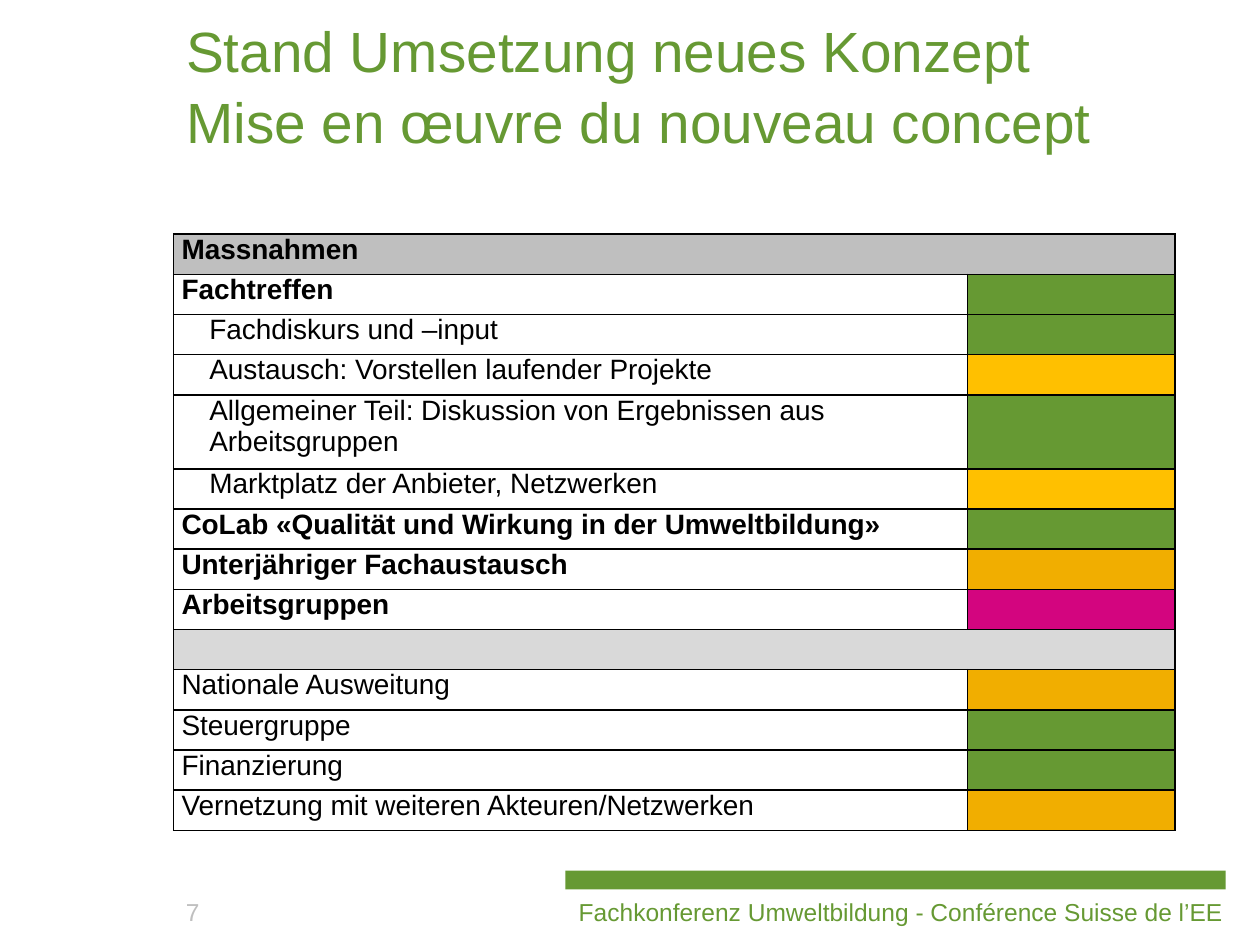
"""Build the slide on the state of the new concept."""
import dataclasses
import typing

import pptx
import pptx.dml.color
import pptx.enum.shapes
import pptx.enum.text
import pptx.oxml
import pptx.oxml.ns
import pptx.util

Cm = pptx.util.Cm
Pt = pptx.util.Pt
ALIGN = pptx.enum.text.PP_ALIGN
ANCHOR = pptx.enum.text.MSO_ANCHOR


@dataclasses.dataclass(frozen=True)
class Theme:
    """Colours and type sizes of the slide."""
    font: str = "Arial"
    green: str = "669933"
    yellow: str = "FFC000"
    orange: str = "F1AE00"
    magenta: str = "D3057F"
    black: str = "000000"
    white: str = "FFFFFF"
    header: str = "BFBFBF"
    divider: str = "D9D9D9"
    title_size: float = 32.4
    table_size: float = 16
    footer_size: float = 14
    border: float = 1


T = Theme()


class Measure(typing.NamedTuple):
    """One table row; a row without status spans both columns."""
    text: str
    status: typing.Optional[str] = None
    bold: bool = False
    indent: float = 0
    height: float = 0.81
    fill: str = T.white


class Label(typing.NamedTuple):
    """One line of text at the foot of the slide."""
    text: str
    width: float
    color: str
    align: ALIGN


MEASURES = [
    Measure("Massnahmen", bold=True, fill=T.header),
    Measure("Fachtreffen", T.green, bold=True),
    Measure("Fachdiskurs und –input", T.green, indent=0.56),
    Measure("Austausch: Vorstellen laufender Projekte", T.yellow, indent=0.56),
    Measure("Allgemeiner Teil: Diskussion von Ergebnissen aus Arbeitsgruppen",
            T.green, indent=0.56, height=1.49),
    Measure("Marktplatz der Anbieter, Netzwerken", T.yellow, indent=0.56),
    Measure("CoLab «Qualität und Wirkung in der Umweltbildung»", T.green, bold=True),
    Measure("Unterjähriger Fachaustausch", T.orange, bold=True),
    Measure("Arbeitsgruppen", T.magenta, bold=True),
    Measure("", fill=T.divider),
    Measure("Nationale Ausweitung", T.orange),
    Measure("Steuergruppe", T.green),
    Measure("Finanzierung", T.green),
    Measure("Vernetzung mit weiteren Akteuren/Netzwerken", T.orange),
]

LABELS = [
    Label("Fachkonferenz Umweltbildung - Conférence Suisse de l’EE",
          21.41, T.green, ALIGN.RIGHT),
    Label("7", 1.8, T.header, ALIGN.LEFT),
]

LEFT = 3.5
COLUMNS = (16, 4.19)


def rgb(color: str) -> pptx.dml.color.RGBColor:
    """Turn a hex string into a colour."""
    return pptx.dml.color.RGBColor.from_string(color)


def apply(target: typing.Any, values: dict) -> None:
    """Set every attribute named in values."""
    for name, value in values.items():
        setattr(target, name, value)


def set_font(font: typing.Any, size: float, color: str, bold: bool = False) -> None:
    """Format a font in the typeface of the theme."""
    apply(font, {"name": T.font, "size": Pt(size), "bold": bold})
    font.color.rgb = rgb(color)


def fill_solid(target: typing.Any, color: str) -> None:
    """Fill a shape or a cell with one colour."""
    target.fill.solid()
    target.fill.fore_color.rgb = rgb(color)


def add_title(s: typing.Any) -> None:
    """Place the two-line title in its placeholder."""
    sp = s.shapes.title
    apply(sp, {"left": Cm(LEFT), "top": Cm(0.76), "width": Cm(21), "height": Cm(3.18)})
    tf = sp.text_frame
    apply(tf, {"vertical_anchor": ANCHOR.MIDDLE, "word_wrap": True,
               "auto_size": pptx.enum.text.MSO_AUTO_SIZE.NONE,
               "margin_bottom": Cm(1.45)})
    tf.text = "Stand Umsetzung neues Konzept\vMise en œuvre du nouveau concept"
    p = tf.paragraphs[0]
    apply(p, {"alignment": ALIGN.LEFT, "line_spacing": 1.04})
    for r in p.runs:
        set_font(r.font, T.title_size, T.green)


def add_label(s: typing.Any, label: Label) -> None:
    """Add one line of footer text."""
    sp = s.shapes.add_textbox(Cm(LEFT), Cm(17.96), Cm(label.width), Cm(0.86))
    tf = sp.text_frame
    tf.word_wrap = True
    p = tf.paragraphs[0]
    p.alignment = label.align
    r = p.add_run()
    r.text = label.text
    set_font(r.font, T.footer_size, label.color)


def add_bar(s: typing.Any) -> None:
    """Add the green bar above the footer."""
    sp = s.shapes.add_shape(pptx.enum.shapes.MSO_SHAPE.RECTANGLE,
                            Cm(11.4), Cm(17.55), Cm(13.31), Cm(0.38))
    sp.shadow.inherit = False
    fill_solid(sp, T.green)
    sp.line.fill.background()


def format_cell(cell: typing.Any, color: str) -> None:
    """Give a cell its fill, margins and four borders."""
    apply(cell, {"margin_left": Cm(0.16), "margin_right": Cm(0.16),
                 "margin_top": 0, "margin_bottom": 0})
    fill_solid(cell, color)
    properties = cell._tc.get_or_add_tcPr()
    for i, side in enumerate("LRTB"):
        properties.insert(i, pptx.oxml.parse_xml(
            f'<a:ln{side} {pptx.oxml.ns.nsdecls("a")} w="{Pt(T.border)}">'
            f'<a:solidFill><a:srgbClr val="{T.black}"/></a:solidFill></a:ln{side}>'))


def add_measures(s: typing.Any, measures: typing.List[Measure]) -> None:
    """Add the table of measures with their status colours."""
    table = s.shapes.add_table(
        len(measures), len(COLUMNS), Cm(LEFT), Cm(4.72), Cm(sum(COLUMNS)),
        Cm(sum(m.height for m in measures))).table
    apply(table, {"first_row": False, "horz_banding": False})
    for column, width in zip(table.columns, COLUMNS):
        column.width = Cm(width)
    for i, m in enumerate(measures):
        table.rows[i].height = Cm(m.height)
        name, status = table.cell(i, 0), table.cell(i, 1)
        format_cell(name, m.fill)
        format_cell(status, m.status or m.fill)
        if m.status is None:
            name.merge(status)
        if m.text:
            p = name.text_frame.paragraphs[0]
            p._p.get_or_add_pPr().set("marL", str(Cm(m.indent)))
            r = p.add_run()
            r.text = m.text
            set_font(r.font, T.table_size, T.black, m.bold)


def main() -> None:
    """Build and save the presentation."""
    prs = pptx.Presentation()
    apply(prs, {"slide_width": Cm(25.4), "slide_height": Cm(19.05)})
    s = prs.slides.add_slide(prs.slide_layouts[5])
    add_bar(s)
    for label in LABELS:
        add_label(s, label)
    add_title(s)
    add_measures(s, MEASURES)
    prs.save("out.pptx")


if __name__ == "__main__":
    main()
